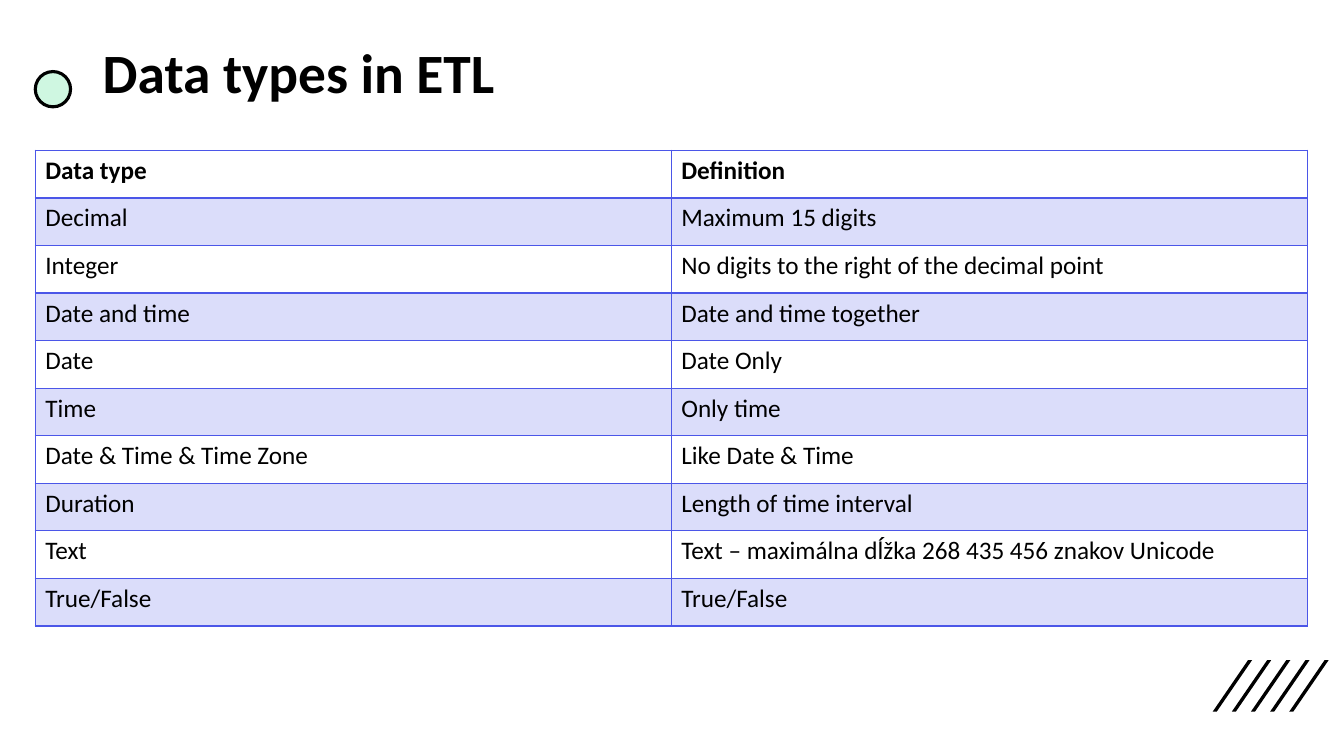
from lxml.etree import SubElement
from pptx import Presentation
from pptx.dml.color import RGBColor
from pptx.enum.shapes import MSO_SHAPE
from pptx.enum.text import MSO_ANCHOR, MSO_AUTO_SIZE, PP_ALIGN
from pptx.oxml.ns import qn
from pptx.util import Pt

FONT = "Calibri"
BLACK = "000000"
MINT = "CFF7E1"
INDIGO = "4B56E8"
BAND_OPACITY = 20
STRIPE_COUNT = 5
ROWS = [
    ("Data type", "Definition"),
    ("Decimal", "Maximum 15 digits"),
    ("Integer", "No digits to the right of the decimal point"),
    ("Date and time", "Date and time together"),
    ("Date", "Date Only"),
    ("Time", "Only time"),
    ("Date & Time & Time Zone", "Like Date & Time"),
    ("Duration", "Length of time interval"),
    ("Text", "Text – maximálna dĺžka 268 435 456 znakov Unicode"),
    ("True/False", "True/False"),
]


def color(value):
    """Turn a hex string into a colour."""
    return RGBColor.from_string(value)


def format_text(para, size, bold):
    """Give every run of a paragraph the slide's font."""
    for span in para.runs:
        span.font.name = FONT
        span.font.size = Pt(size)
        span.font.bold = bold
        span.font.color.rgb = color(BLACK)


def add_stripes(page, left, top, width, height):
    """Fill a box with evenly spaced slanted stripes."""
    thickness, slant = 2.9, 25.2
    pitch = (width - slant - thickness) / (STRIPE_COUNT - 1)
    group = page.shapes.add_group_shape()
    for index in range(STRIPE_COUNT):
        foot = left + index * pitch
        bottom = top + height
        corners = [
            (foot, bottom),
            (foot + slant, top),
            (foot + slant + thickness, top),
        ]
        outline = group.shapes.build_freeform(Pt(foot + thickness), Pt(bottom))
        outline.add_line_segments([(Pt(x), Pt(y)) for x, y in corners])
        stripe = outline.convert_to_shape()
        stripe.shadow.inherit = False
        stripe.fill.solid()
        stripe.fill.fore_color.rgb = color(BLACK)
        stripe.line.fill.background()


def add_heading(page, left, top, width, height):
    """Place the round marker and the title to its right."""
    diameter, marker_drop, title_indent = 25.2, 22.3, 41
    marker = page.shapes.add_shape(
        MSO_SHAPE.OVAL, Pt(left), Pt(top + marker_drop), Pt(diameter), Pt(diameter)
    )
    marker.shadow.inherit = False
    marker.fill.solid()
    marker.fill.fore_color.rgb = color(MINT)
    marker.line.color.rgb = color(BLACK)
    marker.line.width = Pt(2.25)

    title = page.shapes.title
    title.left, title.top = Pt(left + title_indent), Pt(top)
    title.width, title.height = Pt(width - title_indent), Pt(height)
    frame = title.text_frame
    frame.text = "Data types in ETL"
    frame.word_wrap = True
    frame.auto_size = MSO_AUTO_SIZE.NONE
    frame.vertical_anchor = MSO_ANCHOR.MIDDLE
    para = frame.paragraphs[0]
    para.alignment = PP_ALIGN.LEFT
    para.line_spacing = 0.9
    format_text(para, 39.6, True)


def set_border(cell, side, width):
    """Draw one side of a cell."""
    properties = cell._tc.get_or_add_tcPr()
    line = SubElement(properties, qn(f"a:ln{side}"), w=str(Pt(width)))
    fill = SubElement(line, qn("a:solidFill"))
    SubElement(fill, qn("a:srgbClr"), val=INDIGO)


def fill_band(cell):
    """Shade a cell with translucent indigo."""
    cell.fill.solid()
    cell.fill.fore_color.rgb = color(INDIGO)
    tint = cell._tc.tcPr.find(f"{qn('a:solidFill')}/{qn('a:srgbClr')}")
    SubElement(tint, qn("a:alpha"), val=str(BAND_OPACITY * 1000))


def add_type_table(page, left, top, width, height):
    """Place the banded table of data types."""
    table = page.shapes.add_table(
        len(ROWS), len(ROWS[0]), Pt(left), Pt(top), Pt(width), Pt(height)
    ).table
    table.horz_banding = False
    table.first_row = False
    for row_index, texts in enumerate(ROWS):
        table.rows[row_index].height = Pt(height / len(ROWS))
        for column_index, text in enumerate(texts):
            cell = table.cell(row_index, column_index)
            cell.text = text
            format_text(cell.text_frame.paragraphs[0], 18, row_index == 0)
            for side in "LRTB":
                under_header = (row_index, side) in ((0, "B"), (1, "T"))
                set_border(cell, side, 2 if under_header else 1)
            if row_index % 2:
                fill_band(cell)
            else:
                cell.fill.background()


def main():
    """Build and save the slide."""
    deck = Presentation()
    deck.slide_width, deck.slide_height = Pt(960), Pt(540)
    page = deck.slides.add_slide(deck.slide_layouts[5])
    add_stripes(page, 866.2, 471.6, 82.8, 36.7)
    add_heading(page, 25.2, 28.8, 869, 50.4)
    add_type_table(page, 25.2, 107.3, 908.6, 340)
    deck.save("out.pptx")


if __name__ == "__main__":
    main()
